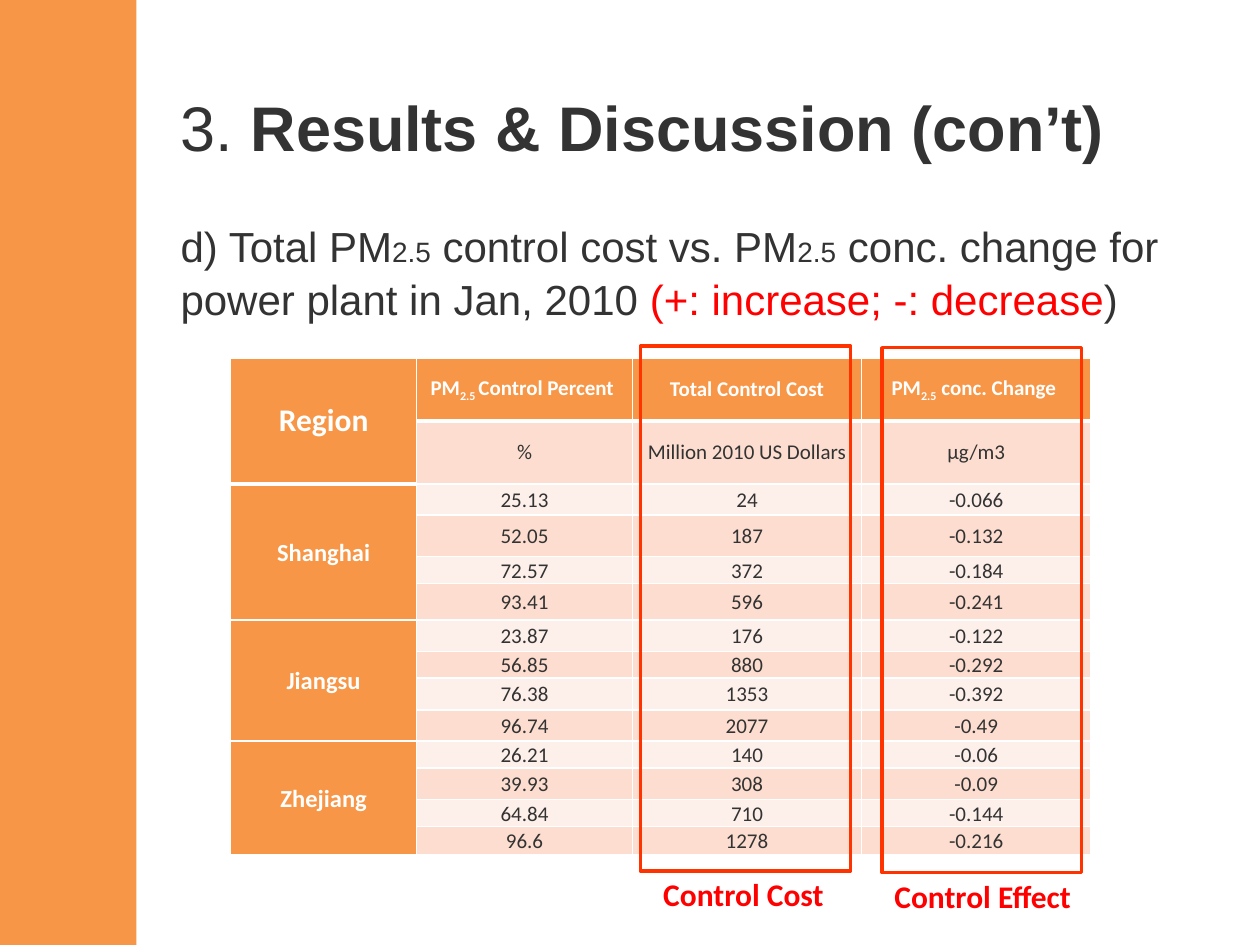
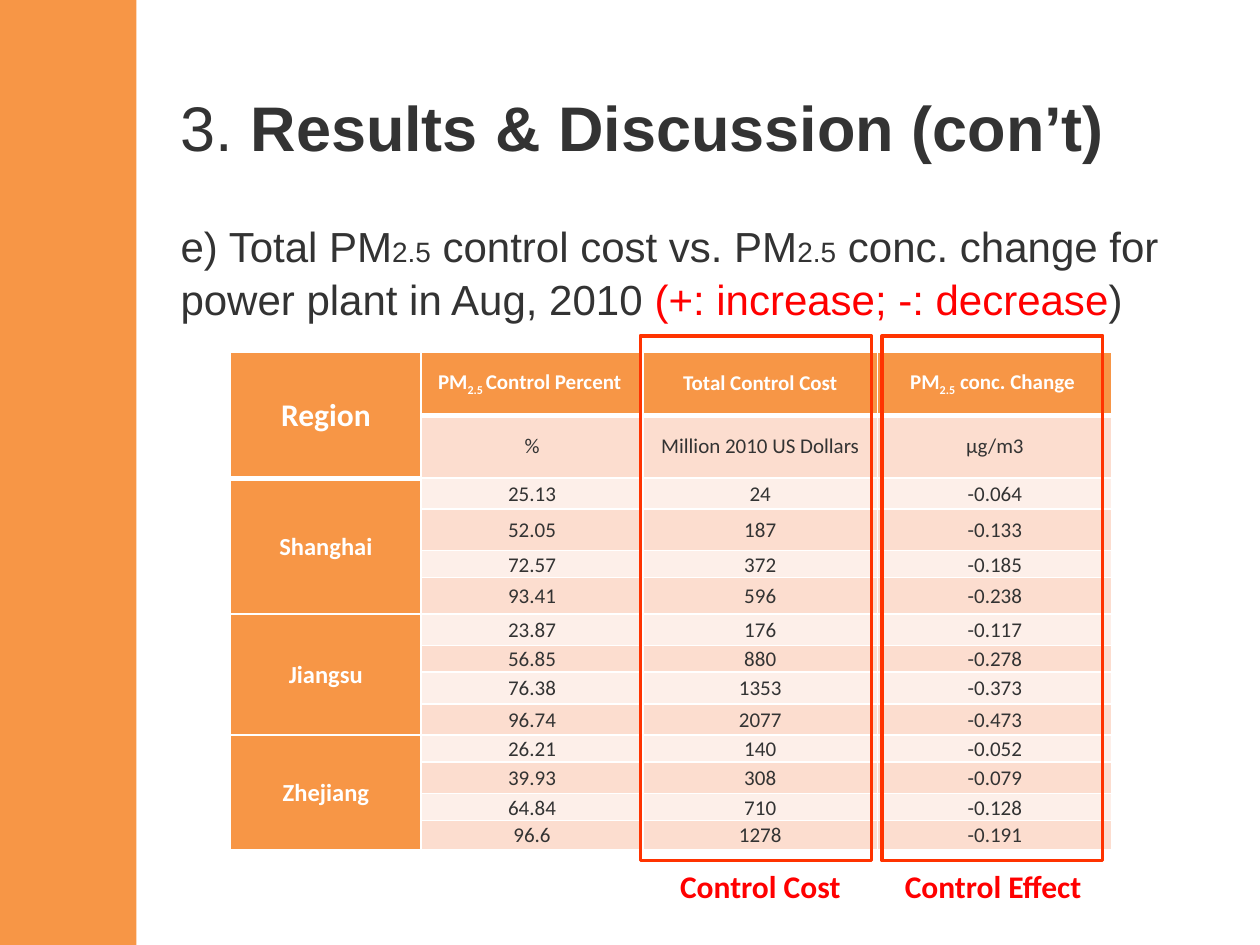
from lxml.etree import SubElement
from pptx import Presentation
from pptx.dml.color import RGBColor
from pptx.enum.shapes import MSO_SHAPE
from pptx.enum.text import MSO_ANCHOR, PP_ALIGN
from pptx.oxml.ns import qn
from pptx.util import Cm, Pt

COLORS = {
    "orange": "F79646",
    "text": "333333",
    "white": "FFFFFF",
    "red": "FF0000",
    "frame": "FF3300",
    "light": "FDEFE9",
    "dark": "FCDDCF",
}
TITLE = "Results & Discussion (con’t)"
SUBSCRIPT = {"baseline": -25000}

# Table content shared by both months
HEADERS = [
    [("Region", {"size": 18})],
    [("PM", {}), ("2.5 ", SUBSCRIPT), ("Control Percent ", {})],
    [("Total Control Cost", {})],
    [("PM", {}), ("2.5", SUBSCRIPT), (" conc. Change ", {})],
]
UNITS = ["%", "Million 2010 US Dollars", "µg/m3"]
REGIONS = ["Shanghai", "Jiangsu", "Zhejiang"]
LEVELS = 4
PERCENTS = ["25.13", "52.05", "72.57", "93.41", "23.87", "56.85",
            "76.38", "96.74", "26.21", "39.93", "64.84", "96.6"]
COSTS = ["24", "187", "372", "596", "176", "880",
         "1353", "2077", "140", "308", "710", "1278"]
ROW_HEIGHTS = [1.27, 1.27, 0.62, 0.84, 0.54, 0.74, 0.63,
               0.54, 0.64, 0.63, 0.54, 0.64, 0.54, 0.58]

# Boxes are (left, top, width, height) in centimetres
MONTHS = [
    {
        "letter": "d", "month": "Jan",
        "changes": ["-0.066", "-0.132", "-0.184", "-0.241", "-0.122", "-0.292",
                    "-0.392", "-0.49", "-0.06", "-0.09", "-0.144", "-0.216"],
        "table_top": 7.22, "columns": [3.75, 4.35, 4.62, 4.62],
        "highlights": [
            ("Control Cost", (12.91, 6.98, 4.24, 10.58), (13.12, 17.52, 3.81, 1.03)),
            ("Control Effect", (17.78, 7.01, 4.02, 10.58), (17.78, 17.56, 4.23, 1.03)),
        ],
    },
    {
        "letter": "e", "month": "Aug",
        "changes": ["-0.064", "-0.133", "-0.185", "-0.238", "-0.117", "-0.278",
                    "-0.373", "-0.473", "-0.052", "-0.079", "-0.128", "-0.191"],
        "table_top": 7.1, "columns": [3.84, 4.47, 4.73, 4.73],
        "highlights": [
            ("Control Cost", (12.91, 6.77, 4.66, 10.58), (13.46, 17.36, 3.89, 1.03)),
            ("Control Effect", (17.78, 6.77, 4.45, 10.58), (17.99, 17.36, 4.52, 1.03)),
        ],
    },
]


def rgb(name):
    return RGBColor.from_string(COLORS[name])


def write(paragraph, text, *, size=12, color="text", bold=False, font="Calibri", baseline=0):
    span = paragraph.add_run()
    span.text = text
    span.font.size = Pt(size)
    span.font.name = font
    span.font.bold = bold
    span.font.color.rgb = rgb(color)
    if baseline:
        span._r.get_or_add_rPr().set("baseline", str(baseline))


def add_text(page, place, spans, anchor=MSO_ANCHOR.TOP, line_spacing=None, **shared):
    box = page.shapes.add_textbox(*map(Cm, place))
    frame = box.text_frame
    frame.word_wrap = True
    frame.vertical_anchor = anchor
    paragraph = frame.paragraphs[0]
    paragraph.line_spacing = line_spacing
    for text, changes in spans:
        write(paragraph, text, **{**shared, **changes})


def add_rectangle(page, place, fill=None, line=None):
    box = page.shapes.add_shape(MSO_SHAPE.RECTANGLE, *map(Cm, place))
    box.shadow.inherit = False
    if fill:
        box.fill.solid()
        box.fill.fore_color.rgb = rgb(fill)
    else:
        box.fill.background()
    if line:
        box.line.color.rgb = rgb(line)
        box.line.width = Pt(2)
    else:
        box.line.fill.background()


def set_borders(cell, top, bottom):
    properties = cell._tc.get_or_add_tcPr()
    for side, width in (("L", 1), ("R", 1), ("T", top), ("B", bottom)):
        line = SubElement(properties, qn(f"a:ln{side}"), w=str(Pt(width)))
        fill = SubElement(line, qn("a:solidFill"))
        SubElement(fill, qn("a:srgbClr"), val=COLORS["white"])


def fill_cell(cell, spans, fill, margins, **shared):
    cell.fill.solid()
    cell.fill.fore_color.rgb = rgb(fill)
    cell.vertical_anchor = MSO_ANCHOR.MIDDLE
    cell.margin_left = cell.margin_right = Cm(margins[0])
    cell.margin_top, cell.margin_bottom = Cm(margins[1]), Cm(margins[2])
    paragraph = cell.text_frame.paragraphs[0]
    paragraph.alignment = PP_ALIGN.CENTER
    for text, changes in spans:
        write(paragraph, text, **{**shared, **changes})


def has_thick_bottom(row, column):
    return row == 0 or (row == 1 and column == 0)


def add_cost_table(page, top, columns, changes):
    place = (4.65, top, sum(columns), sum(ROW_HEIGHTS))
    table = page.shapes.add_table(len(ROW_HEIGHTS), len(columns), *map(Cm, place)).table
    table.first_row = table.horz_banding = False
    for column, width in zip(table.columns, columns):
        column.width = Cm(width)
    for row, height in zip(table.rows, ROW_HEIGHTS):
        row.height = Cm(height)
    for row in range(len(ROW_HEIGHTS)):
        for column in range(len(columns)):
            set_borders(table.cell(row, column),
                        top=3 if row and has_thick_bottom(row - 1, column) else 1,
                        bottom=3 if has_thick_bottom(row, column) else 1)

    # Header and region names
    roomy, tight = (0.25, 0.13, 0.13), (0.03, 0.03, 0)
    for column, spans in enumerate(HEADERS):
        fill_cell(table.cell(0, column), spans, "orange", roomy, color="white", bold=True)
    table.cell(0, 0).merge(table.cell(1, 0))
    for index, region in enumerate(REGIONS):
        first = 2 + index * LEVELS
        fill_cell(table.cell(first, 0), [(region, {})], "orange", tight,
                  size=14, color="white", bold=True)
        table.cell(first, 0).merge(table.cell(first + LEVELS - 1, 0))

    # Units and values in alternating bands
    body = [UNITS, *zip(PERCENTS, COSTS, changes)]
    for row, values in enumerate(body, start=1):
        for column, value in enumerate(values, start=1):
            fill_cell(table.cell(row, column), [(value, {})],
                      "dark" if row % 2 else "light", roomy if row == 1 else tight)


def add_frame(page):
    add_rectangle(page, (0, 0, 2.75, 19.05), fill="orange")
    add_text(page, (3.39, 1.48, 20.32, 2.12), [("3. ", {}), (TITLE, {"bold": True})],
             anchor=MSO_ANCHOR.MIDDLE, size=36, font="Arial")


def add_heading(page, letter, month):
    small, red = {"size": 16}, {"color": "red"}
    spans = [
        (f"{letter}) Total PM", {}), ("2.5", small),
        (" control cost vs. PM", {}), ("2.5", small),
        (f" conc. change for power plant in {month}, 2010 ", {}),
        ("(+: increase; -: decrease", red), (")", {}),
    ]
    add_text(page, (3.39, 4.26, 21.38, 2.31), spans, line_spacing=1.06, size=24, font="Arial")


def main():
    deck = Presentation()
    deck.slide_width, deck.slide_height = Cm(25.4), Cm(19.05)
    for data in MONTHS:
        page = deck.slides.add_slide(deck.slide_layouts[6])
        add_frame(page)
        add_heading(page, data["letter"], data["month"])
        add_cost_table(page, data["table_top"], data["columns"], data["changes"])
        for label, outline, caption in data["highlights"]:
            add_rectangle(page, outline, line="frame")
            add_text(page, caption, [(label, {})], size=18, color="red", bold=True)
    deck.save("out.pptx")


if __name__ == "__main__":
    main()
